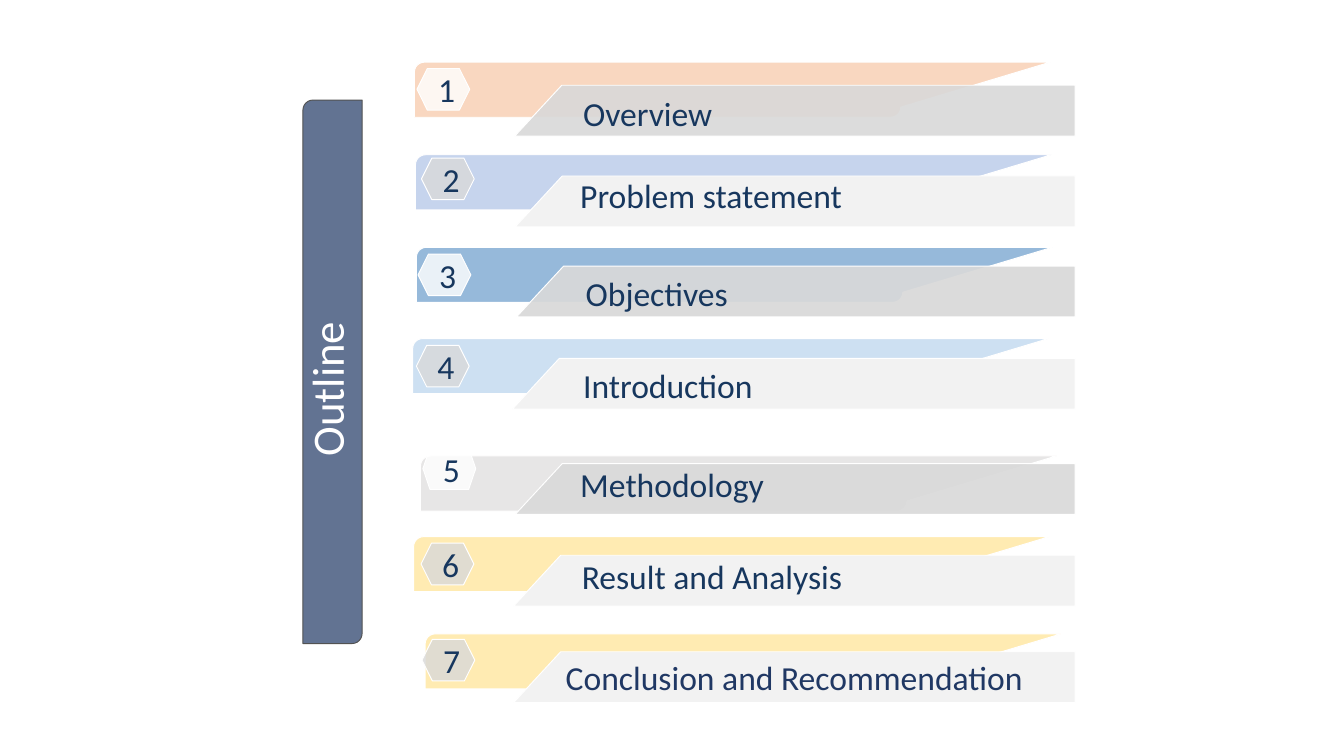
import math

import pptx
import pptx.dml.color
import pptx.enum.shapes
import pptx.enum.text
import pptx.oxml.ns
import pptx.util

Pt = pptx.util.Pt
SHAPE = pptx.enum.shapes.MSO_SHAPE
ANCHOR = pptx.enum.text.MSO_ANCHOR
ALIGN = pptx.enum.text.PP_ALIGN
qn = pptx.oxml.ns.qn


def paint(shape, color, opacity=100, line="FFFFFF"):
    """Give a shape its fill, fill opacity in percent and thin outline."""
    shape.shadow.inherit = False
    shape.fill.solid()
    shape.fill.fore_color.rgb = pptx.dml.color.RGBColor.from_string(color)
    shape.line.color.rgb = pptx.dml.color.RGBColor.from_string(line)
    shape.line.width = Pt(0.5)
    if opacity < 100:
        fill_color = shape.element.spPr.find(qn("a:solidFill")).find(qn("a:srgbClr"))
        fill_color.makeelement(qn("a:alpha"))
        alpha = fill_color.makeelement(qn("a:alpha"), {"val": str(opacity * 1000)})
        fill_color.append(alpha)


def write(shape, text, size=18, color="17375E", align=ALIGN.CENTER,
          anchor=ANCHOR.MIDDLE, wrap=True):
    frame = shape.text_frame
    frame.word_wrap = wrap
    frame.vertical_anchor = anchor
    paragraph = frame.paragraphs[0]
    paragraph.alignment = align
    run = paragraph.add_run()
    run.text = text
    run.font.size = Pt(size)
    run.font.name = "Calibri"
    run.font.color.rgb = pptx.dml.color.RGBColor.from_string(color)


presentation = pptx.Presentation()
presentation.slide_width, presentation.slide_height = Pt(720), Pt(405)
slide = presentation.slides.add_slide(presentation.slide_layouts[5])
shapes = slide.shapes

# Vertical bar with the rotated title on top of it
title = shapes.title
title.left, title.top, title.width, title.height = Pt(131), Pt(190.1), Pt(87.1), Pt(36)
title.rotation = 270
title.text_frame.auto_size = pptx.enum.text.MSO_AUTO_SIZE.NONE
write(title, "Outline", size=24, color="FFFFFF", align=ALIGN.LEFT,
      anchor=ANCHOR.TOP, wrap=False)

bar = shapes.add_shape(SHAPE.ROUND_2_DIAG_RECTANGLE, Pt(162.3), Pt(53.6), Pt(31.7), Pt(291.2))
bar.adjustments[0], bar.adjustments[1] = 0.17, 0
paint(bar, "203864", opacity=70, line="525252")
title.element.addprevious(bar.element)

# Outline of a ribbon, relative to its top left corner
RADIUS = 5.4
RIBBON_WIDTH, RIBBON_HEIGHT = 340.6, 29.5
NOTCH_X = 255.2
steps = [math.radians(angle) for angle in range(0, 91, 15)]
top_left = [(RADIUS * (1 - math.cos(a)), RADIUS * (1 - math.sin(a))) for a in steps]
notch = [(NOTCH_X + RADIUS * math.cos(a), RIBBON_HEIGHT - RADIUS * (1 - math.sin(a)))
         for a in steps]
ribbon_points = top_left + [(RIBBON_WIDTH, 0)] + notch + [(0, RIBBON_HEIGHT)]

PLATE_RIGHT, PLATE_HEIGHT, PLATE_SLANT = 576, 27.2, 25.2
LIGHT, GRAY, WHITE = "F2F2F2", "D9D9D9", "FFFFFF"

# text, ribbon (x, y, colour), plate (x, y, colour, opacity),
# hexagon (x, y, colour), label (x, y, width) or None for text inside the plate
rows = [
    ("Overview", (222, 33.3, "F4B183"), (275.8, 45.7, GRAY, 90),
     (223.4, 36.7, WHITE), (305.3, 46.1, 84.2)),
    ("Problem statement", (222.6, 82.9, "8FAADC"), (276, 94.3, LIGHT, 100),
     (225.8, 84.7, GRAY), (303.8, 90, 156.2)),
    ("Objectives", (223.1, 132.5, "2E75B6"), (276.7, 142.6, GRAY, 92),
     (224, 136.1, WHITE), (306.7, 142.6, 91.4)),
    ("Introduction", (221.1, 181.4, "9DC3E6"), (274.5, 192, LIGHT, 100),
     (223.1, 185, GRAY), (305.3, 192.2, 106.6)),
    ("Methodology", (225.3, 244.3, "D0CECE"), (276, 248.4, GRAY, 90),
     (226.6, 239.9, WHITE), (303.8, 244.8, 227.5)),
    ("Result and Analysis", (221.6, 287.5, "FFD966"), (275.2, 297.5, LIGHT, 100),
     (225.6, 291, GRAY), (304.6, 294.5, 155.5)),
    ("Conclusion and Recommendation", (227.8, 339.6, "FFD966"), (275.2, 349.2, LIGHT, 100),
     (226.1, 342.5, GRAY), None),
]

for number, (text, ribbon_spot, plate_spot, hexagon_spot, label_spot) in enumerate(rows, 1):
    x, y, color = ribbon_spot
    corners = [(Pt(x + dx), Pt(y + dy)) for dx, dy in ribbon_points]
    builder = shapes.build_freeform(*corners[0])
    builder.add_line_segments(corners[1:], close=True)
    paint(builder.convert_to_shape(), color, opacity=50)

    x, y, color, opacity = plate_spot
    builder = shapes.build_freeform(Pt(x + PLATE_SLANT), Pt(y))
    builder.add_line_segments([(Pt(PLATE_RIGHT), Pt(y)),
                               (Pt(PLATE_RIGHT), Pt(y + PLATE_HEIGHT)),
                               (Pt(x), Pt(y + PLATE_HEIGHT))], close=True)
    plate = builder.convert_to_shape()
    paint(plate, color, opacity)

    x, y, color = hexagon_spot
    hexagon = shapes.add_shape(SHAPE.HEXAGON, Pt(x), Pt(y), Pt(28.3), Pt(22.3))
    if text == "Methodology":
        hexagon.adjustments[0] = 0.169
    paint(hexagon, color, opacity=80)
    write(hexagon, str(number))

    if label_spot is None:
        write(plate, text, color="203864")
    else:
        x, y, width = label_spot
        label = shapes.add_textbox(Pt(x), Pt(y), Pt(width), Pt(28.8))
        write(label, text, align=ALIGN.LEFT, anchor=ANCHOR.TOP, wrap=False)

presentation.save("out.pptx")
